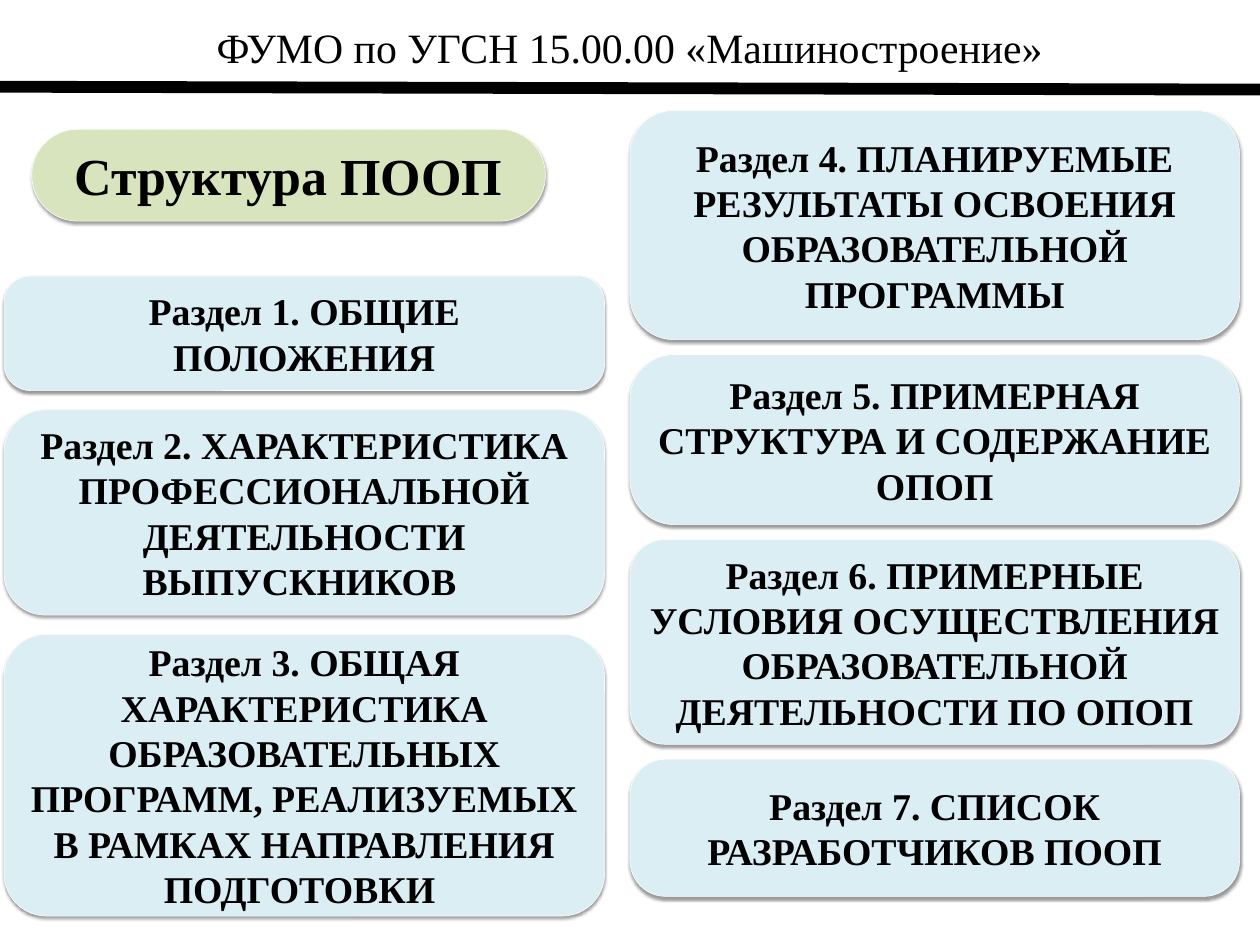
from lxml import etree
from pptx import Presentation
from pptx.dml.color import RGBColor as Rgb
from pptx.enum.shapes import MSO_CONNECTOR as Conn, MSO_SHAPE as Form
from pptx.enum.text import MSO_ANCHOR as Anchor, MSO_AUTO_SIZE as Fit, PP_ALIGN as Align
from pptx.oxml import parse_xml
from pptx.oxml.ns import nsdecls, qn
from pptx.util import Inches, Pt

WIDE, HIGH = Inches(22.22), Inches(16.67)
COLORS = {"ink": "000000", "edge": "FFFFFF", "blue": "DBEEF4", "green": "D7E4BD"}
FACE = "Times New Roman"

# Each column: left, top, width and gap in percent of the slide,
# then its sections as (height, corner, text).
COLUMNS = [
    (0.32, 29.21, 47.66, 2.04, [
        (12.12, 0.23, "Раздел 1. ОБЩИЕ ПОЛОЖЕНИЯ"),
        (21.72, 0.2, "Раздел 2. ХАРАКТЕРИСТИКА ПРОФЕССИОНАЛЬНОЙ "
                     "ДЕЯТЕЛЬНОСТИ ВЫПУСКНИКОВ "),
        (29.81, 0.15, "Раздел 3. ОБЩАЯ ХАРАКТЕРИСТИКА ОБРАЗОВАТЕЛЬНЫХ ПРОГРАММ, "
                      "РЕАЛИЗУЕМЫХ В РАМКАХ НАПРАВЛЕНИЯ ПОДГОТОВКИ "),
    ]),
    (50, 11.7, 48.38, 1.58, [
        (24.24, 0.19, "Раздел 4. ПЛАНИРУЕМЫЕ РЕЗУЛЬТАТЫ ОСВОЕНИЯ "
                      "ОБРАЗОВАТЕЛЬНОЙ ПРОГРАММЫ"),
        (18, 0.26, "Раздел 5. ПРИМЕРНАЯ СТРУКТУРА И СОДЕРЖАНИЕ ОПОП"),
        (21.66, 0.17, "Раздел 6. ПРИМЕРНЫЕ УСЛОВИЯ ОСУЩЕСТВЛЕНИЯ "
                      "ОБРАЗОВАТЕЛЬНОЙ ДЕЯТЕЛЬНОСТИ ПО ОПОП"),
        (14.52, 0.26, "Раздел 7. СПИСОК РАЗРАБОТЧИКОВ ПООП"),
    ]),
]


def across(share):
    return round(WIDE * share / 100)


def down(share):
    return round(HIGH * share / 100)


def place(left, top, width, height):
    return across(left), down(top), across(width), down(height)


def apply(item, values):
    for name, value in values.items():
        setattr(item, name, value)


def color(key):
    return Rgb.from_string(COLORS[key])


def write(shape, text, size, bold, anchor, inset):
    """Fill a shape with one centred paragraph; inset is (side, top) in inches."""
    side, top = map(Inches, inset)
    frame = shape.text_frame
    apply(frame, {
        "text": text, "word_wrap": True, "auto_size": Fit.NONE,
        "vertical_anchor": anchor, "margin_left": side, "margin_right": side,
        "margin_top": top, "margin_bottom": top,
    })
    para = frame.paragraphs[0]
    para.alignment = Align.CENTER
    font = para.runs[0].font
    apply(font, {"name": FACE, "size": Pt(size), "bold": bold})
    font.color.rgb = color("ink")


def shade(shape):
    """Cast a soft shadow straight down."""
    shape.shadow.inherit = False
    effects = shape._element.spPr.find(qn("a:effectLst"))
    effects.append(parse_xml(
        f'<a:outerShdw {nsdecls("a")} blurRad="{Pt(4)}" dist="{Pt(3)}" '
        f'dir="5400000" rotWithShape="0"><a:srgbClr val="{COLORS["ink"]}">'
        '<a:alpha val="40000"/></a:srgbClr></a:outerShdw>'))


def add_card(slide, box, corner, fill, text, size):
    card = slide.shapes.add_shape(Form.ROUNDED_RECTANGLE, *place(*box))
    card.adjustments[0] = corner
    card.fill.solid()
    card.fill.fore_color.rgb = color(fill)
    card.line.color.rgb = color("edge")
    card.line.width = Pt(0.75)
    shade(card)
    write(card, text, size, True, Anchor.MIDDLE, (0.1, 0.05))


def add_stack(slide, left, top, width, gap, cards):
    for height, corner, text in cards:
        add_card(slide, (left, top, width, height), corner, "blue", text, 48)
        top += height + gap


def add_head(slide, text):
    title = slide.shapes.title
    spots = ("left", "top", "width", "height")
    apply(title, dict(zip(spots, place(0, 1.68, 100, 6.72))))
    write(title, text, 53, False, Anchor.TOP, (0.22, 0.11))


def add_rule(slide):
    rule = slide.shapes.add_connector(
        Conn.STRAIGHT, 0, down(9.18), WIDE, down(9.48))
    rule.line.color.rgb = color("ink")
    rule.line.width = Pt(15)
    etree.SubElement(rule._element.spPr, qn("a:effectLst"))


def main():
    deck = Presentation()
    apply(deck, {"slide_width": WIDE, "slide_height": HIGH})
    slide = deck.slides.add_slide(deck.slide_layouts.get_by_name("Title Only"))
    add_head(slide, "ФУМО по УГСН 15.00.00 «Машиностроение»")
    add_rule(slide)
    add_card(slide, (2.52, 13.68, 40.77, 9.72), 0.5, "green", "Структура ПООП", 66)
    for column in COLUMNS:
        add_stack(slide, *column)
    deck.save("out.pptx")


if __name__ == "__main__":
    main()
